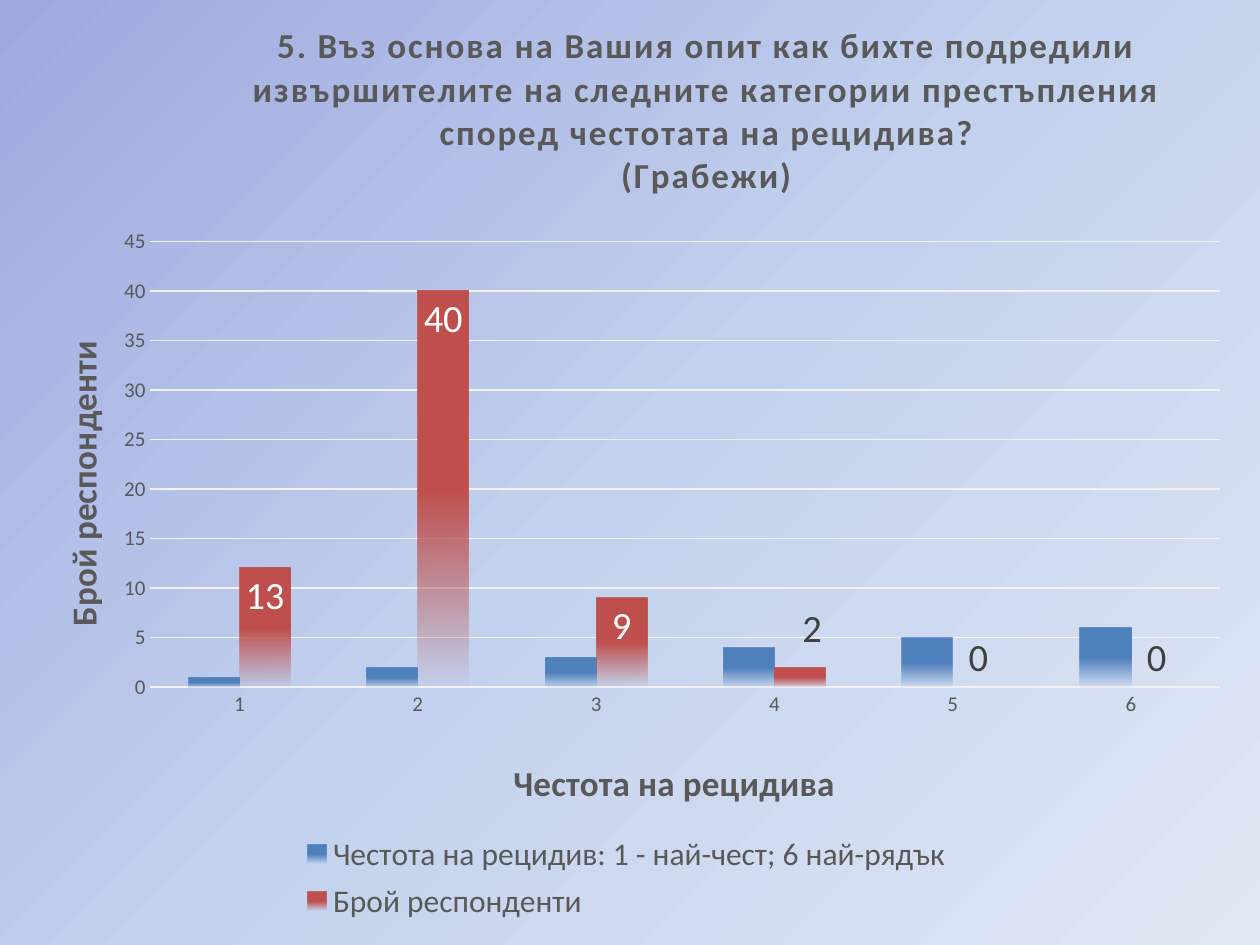
import pptx
import pptx.chart.data
import pptx.dml.color
import pptx.enum.chart
import pptx.oxml
import pptx.oxml.ns
import pptx.util
from dataclasses import dataclass
from lxml import etree

Pt = pptx.util.Pt
qn = pptx.oxml.ns.qn
Kind = pptx.enum.chart.XL_CHART_TYPE
Spot = pptx.enum.chart.XL_LABEL_POSITION
GREY, DARK, WHITE = "595959", "404040", "FFFFFF"


@dataclass
class Stop:
    pos: int
    color: str
    alpha: int = 100


@dataclass
class Series:
    name: str
    vals: tuple
    color: str


ROWS = [
    Series("Честота на рецидив: 1 - най-чест; 6 най-рядък ", (1, 2, 3, 4, 5, 6), "4F81BD"),
    Series("Брой респонденти", (12, 40, 9, 2, 0, 0), "C0504D"),
]
HEAD = ("5. Въз основа на Вашия опит как бихте подредили извършителите на "
        "следните категории престъпления според честотата на рецидива?\n(Грабежи)")


def paint(color: str) -> pptx.dml.color.RGBColor:
    return pptx.dml.color.RGBColor.from_string(color)


def style(font, size: float, color: str, bold: bool = False) -> None:
    font.name = "Calibri"
    font.size = Pt(size)
    font.bold = bold
    font.color.rgb = paint(color)


def blend(fill, root, stops: list[Stop], angle: int) -> None:
    """Give the fill, found below root, a linear gradient."""
    fill.gradient()
    grad = root.find(".//" + qn("a:gradFill"))
    for child in list(grad):
        grad.remove(child)
    group = etree.SubElement(grad, qn("a:gsLst"))
    for stop in stops:
        mark = etree.SubElement(group, qn("a:gs"), pos=str(stop.pos * 1000))
        tint = etree.SubElement(mark, qn("a:srgbClr"), val=stop.color)
        if stop.alpha < 100:
            etree.SubElement(tint, qn("a:alpha"), val=str(stop.alpha * 1000))
    etree.SubElement(grad, qn("a:lin"), ang=str(angle * 60000), scaled="0")


def place(node, index: int, inner: bool = False, edge: bool = True, **box: float) -> None:
    """Set a manual layout, in fractions of the chart, as the child at index."""
    for old in node.findall(qn("c:layout")):
        node.remove(old)
    layout = etree.Element(qn("c:layout"))
    node.insert(index, layout)
    manual = etree.SubElement(layout, qn("c:manualLayout"))
    if inner:
        etree.SubElement(manual, qn("c:layoutTarget"), val="inner")
    if edge:
        for mode in ("xMode", "yMode"):
            etree.SubElement(manual, qn("c:" + mode), val="edge")
    for key, value in box.items():
        etree.SubElement(manual, qn("c:" + key), val=str(value))


def entitle(owner, node, text: str, x: float, y: float, space: int = 0) -> None:
    """Write a bold title for a chart or an axis and place it."""
    frame = (owner.chart_title if hasattr(owner, "chart_title") else owner.axis_title).text_frame
    frame.text = text
    for para in frame.paragraphs:
        style(para.font, 20, GREY, True)
        for run in para.runs:
            style(run.font, 20, GREY, True)
            if space:
                run.font._element.set("spc", str(space))
    place(node.find(qn("c:title")), 1, x=x, y=y)


def axis(item, text: str, x: float, y: float) -> None:
    item.has_title = True
    entitle(item, item._element, text, x, y)
    item.major_tick_mark = item.minor_tick_mark = pptx.enum.chart.XL_TICK_MARK.NONE
    item.format.line.fill.background()
    style(item.tick_labels.font, 12, GREY)


def label(series) -> None:
    """Show the values, with white ones inside the three tall bars."""
    labels = series.data_labels
    labels.show_value = True
    labels.position = Spot.OUTSIDE_END
    style(labels.font, 22, DARK)
    for index in range(3):
        tag = series.points[index].data_label
        if index == 0:
            tag.text_frame.text = "13"
            style(tag.text_frame.paragraphs[0].runs[0].font, 22, WHITE)
        else:
            style(tag.font, 22, WHITE)
        tag.position = Spot.INSIDE_END
    tag = series.points[3].data_label
    style(tag.font, 22, DARK)
    tag.position = Spot.OUTSIDE_END
    place(tag._dLbl, 1, edge=False, x=0.01, y=-0.01)


def draw(slide) -> None:
    data = pptx.chart.data.CategoryChartData()
    data.categories = ["1", "2", "3", "4", "5", "6"]
    for row in ROWS:
        data.add_series(row.name, row.vals)
    chart = slide.shapes.add_chart(
        Kind.COLUMN_CLUSTERED, Pt(8.64), Pt(0), Pt(702.72), Pt(530.64), data).chart
    style(chart.font, 10, "000000")
    chart.has_title = True
    root = chart._chartSpace.chart
    entitle(chart, root, HEAD, 0.19, 0.02, 100)
    place(root.plotArea, 0, True, x=0.11, y=0.26, w=0.87, h=0.48)

    axis(chart.category_axis, "Честота на рецидива", 0.4, 0.81)
    side = chart.value_axis
    axis(side, "Брой респонденти", 0.03, 0.36)
    side.minimum_scale, side.maximum_scale, side.major_unit = 0, 45, 5
    line = side.major_gridlines.format.line
    line.width = Pt(0.75)
    line.color.rgb = paint("F2F2F2")

    plot = chart.plots[0]
    plot.gap_width, plot.overlap = 150, 0
    plot.vary_by_categories = False
    for series, row in zip(plot.series, ROWS):
        stops = [Stop(50, row.color), Stop(100, row.color, 0)]
        blend(series.format.fill, series._element, stops, 90)
    label(plot.series[1])

    chart.has_legend = True
    chart.legend.position = pptx.enum.chart.XL_LEGEND_POSITION.BOTTOM
    chart.legend.include_in_layout = False
    style(chart.legend.font, 18, GREY)
    place(chart.legend._element, 1, x=0.23, y=0.89, w=0.54, h=0.11)


def main() -> None:
    deck = pptx.Presentation()
    deck.slide_width, deck.slide_height = Pt(720), Pt(540)
    slide = deck.slides.add_slide(deck.slide_layouts[6])
    stops = [Stop(0, "9EA9E0"), Stop(50, "C2D1ED"), Stop(100, "E1E8F5")]
    blend(slide.background.fill, slide._element, stops, 45)
    draw(slide)
    deck.save("out.pptx")


if __name__ == "__main__":
    main()
